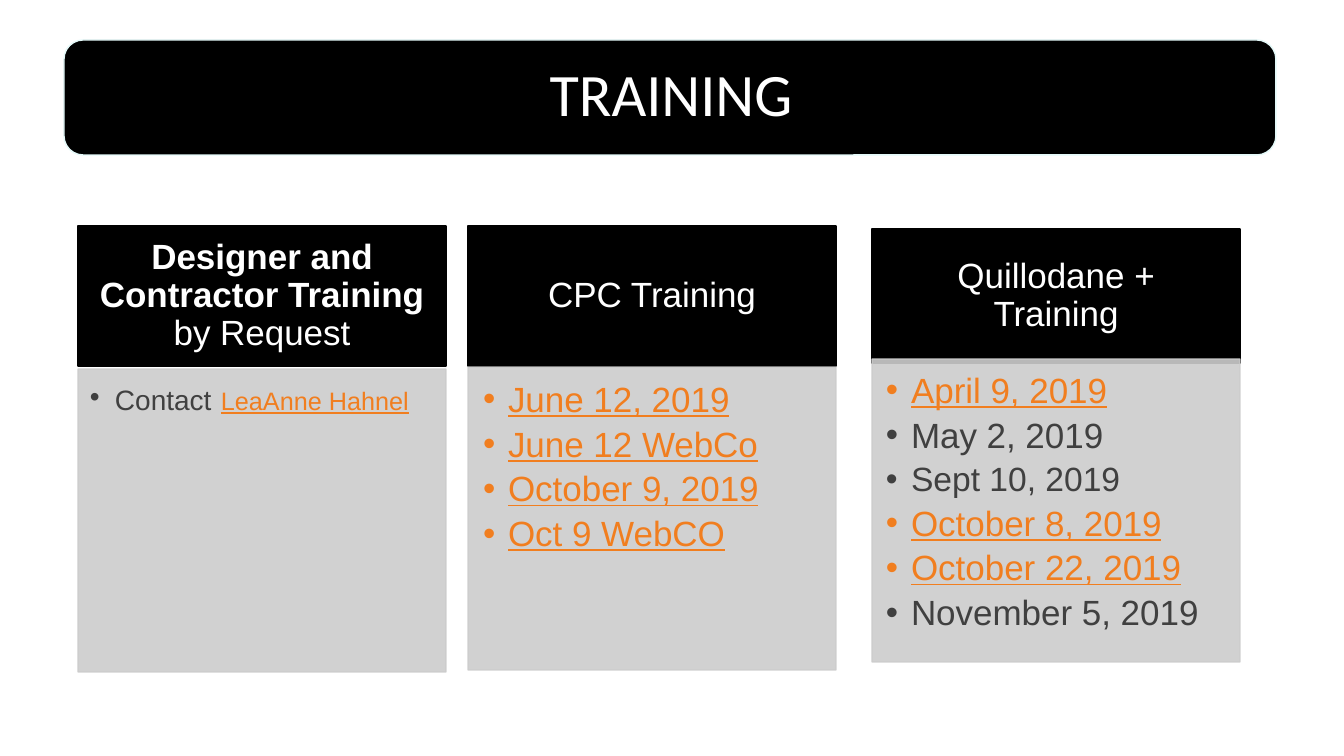
from pptx import Presentation
from pptx.dml.color import RGBColor
from pptx.enum.shapes import MSO_SHAPE
from pptx.enum.text import MSO_ANCHOR, MSO_AUTO_SIZE, PP_ALIGN
from pptx.oxml.ns import qn
from pptx.util import Pt
from lxml.etree import SubElement

BLACK = RGBColor(0, 0, 0)
WHITE = RGBColor(255, 255, 255)
GREY = RGBColor(0xCC, 0xCC, 0xCC)
DARK = RGBColor(0x40, 0x40, 0x40)
ORANGE = RGBColor(0xF1, 0x7E, 0x1F)
MINT = RGBColor(0xE4, 0xF9, 0xF9)

PLAIN = {"color": DARK}
LINK = {"color": ORANGE, "under": True}
BOLD = {"bold": True}

TITLE = [[("TRAINING", {})]]
COLS = [
    {"x": 78, "head": (226, 140), "list": 369, "pad": (12, 12, 16, 17),
     "name": [("Designer and Contractor Training ", BOLD), ("by Request", {})],
     "rows": [[("Contact", {**PLAIN, "size": 20}), (" ", {**PLAIN, "size": 24}),
               ("LeaAnne Hahnel", {**LINK, "size": 18})]]},
    {"x": 468, "head": (226, 140), "list": 367, "pad": (15, 15, 19, 22),
     "name": [("CPC Training", {})],
     "rows": [[("June 12, 2019", LINK)], [("June 12 WebCo", LINK)],
              [("October 9, 2019", LINK)], [("Oct 9 WebCO", LINK)]]},
    {"x": 872, "head": (229, 134), "list": 359, "pad": (14, 14, 19, 21),
     "name": [("Quillodane + Training", {})],
     "rows": [[("April 9, 2019", LINK)], [("May 2, 2019", PLAIN)],
              [("Sept 10, 2019", {**PLAIN, "size": 24})],
              [("October 8, 2019", LINK)], [("October 22, 2019", LINK)],
              [("November 5, 2019", PLAIN)]]},
]
WIDTH, DEPTH, INDENT = 368, 303, 25
SCALE = 914400 / 100.8


def px(num):
    """Turn pixels into EMU."""
    return round(num * SCALE)


def place(shape, *box):
    """Move and size a shape, and bring it to the front."""
    shape.left, shape.top, shape.width, shape.height = map(px, box)
    tree.append(shape._element)


def paint(shape, fill, line, alpha=None):
    """Fill and outline a shape."""
    shape.fill.solid()
    shape.fill.fore_color.rgb = fill
    shape.line.color.rgb = line
    shape.line.width = Pt(1)
    if alpha:
        for tint in shape._element.spPr.iter(qn("a:srgbClr")):
            SubElement(tint, qn("a:alpha"), val=str(alpha * 1000))


def write(shape, paras, pad, size=25, font="Arial", color=WHITE, after=0,
          align=PP_ALIGN.CENTER, anchor=MSO_ANCHOR.MIDDLE, bullet=False):
    """Write paragraphs of formatted runs into a shape."""
    frame = shape.text_frame
    frame.word_wrap = True
    frame.auto_size = MSO_AUTO_SIZE.NONE
    frame.vertical_anchor = anchor
    (frame.margin_left, frame.margin_top,
     frame.margin_right, frame.margin_bottom) = map(px, pad)
    for num, runs in enumerate(paras):
        para = frame.add_paragraph() if num else frame.paragraphs[0]
        if bullet:
            props = para._p.get_or_add_pPr()
            props.set("marL", str(px(INDENT)))
            props.set("indent", str(-px(INDENT)))
            SubElement(props, qn("a:buChar"), char="•")
        para.alignment = align
        para.line_spacing = 0.9
        para.space_before = Pt(0)
        para.space_after = Pt(after)
        for words, look in runs:
            run = para.add_run()
            run.text = words
            run.font.name = font
            run.font.size = Pt(look.get("size", size))
            run.font.bold = look.get("bold", False)
            run.font.underline = look.get("under", False)
            run.font.color.rgb = look.get("color", color)


def block(kind, *box, line=BLACK):
    """Add a black block."""
    shape = slide.shapes.add_shape(kind, *map(px, box))
    shape.shadow.inherit = False
    paint(shape, BLACK, line)
    return shape


deck = Presentation()
deck.slide_width, deck.slide_height = px(1344), px(756)
slide = deck.slides.add_slide(deck.slide_layouts.get_by_name("Comparison"))
tree = slide.shapes._spTree
title, *lists = slide.placeholders

block(MSO_SHAPE.ROUNDED_RECTANGLE, 64, 40, 1212, 115, line=MINT)
place(title, 70, 45, 1202, 104)
write(title, TITLE, (18, 18, 18, 18), size=43, font="Calibri")

for col, body in zip(COLS, lists):
    top, high = col["head"]
    head = block(MSO_SHAPE.RECTANGLE, col["x"], top, WIDTH, high)
    write(head, [col["name"]], (19, 11, 19, 11))
    place(body, col["x"], col["list"], WIDTH, DEPTH)
    paint(body, GREY, GREY, alpha=90)
    write(body, col["rows"], col["pad"], after=5, align=PP_ALIGN.LEFT,
          anchor=MSO_ANCHOR.TOP, bullet=True)

for spare in lists[len(COLS):]:
    tree.remove(spare._element)

deck.save("out.pptx")
